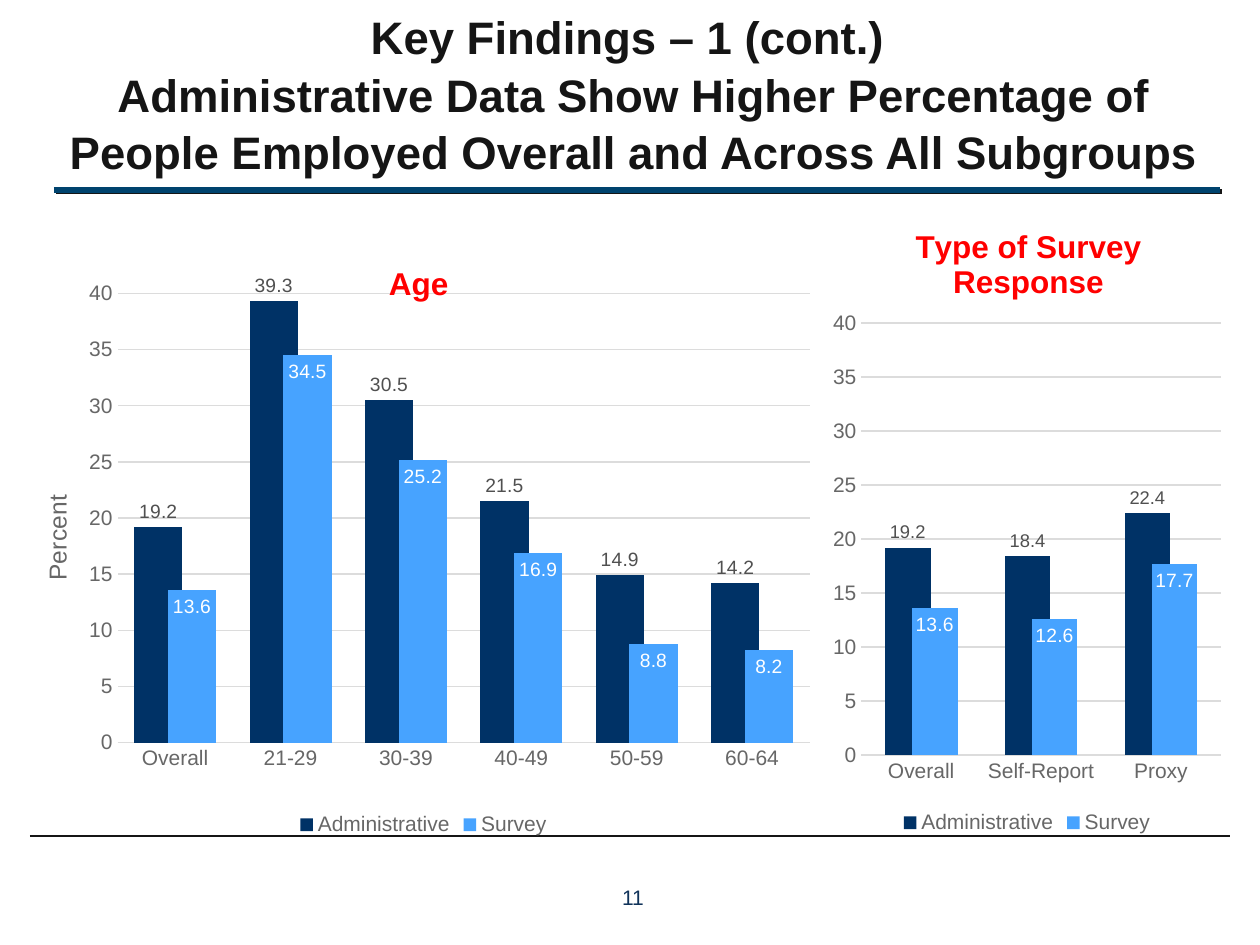
from pptx import Presentation
from pptx.chart.data import CategoryChartData
from pptx.dml.color import RGBColor
from pptx.enum.chart import XL_CHART_TYPE, XL_LABEL_POSITION, XL_LEGEND_POSITION, XL_TICK_MARK
from pptx.enum.shapes import MSO_CONNECTOR
from pptx.enum.text import MSO_ANCHOR, MSO_AUTO_SIZE, PP_ALIGN
from pptx.oxml import parse_xml
from pptx.oxml.ns import nsdecls, qn
from pptx.util import Emu, Pt

INK, NAVY, SKY = "151515", "003266", "47A3FF"
GRAY, GRID, RED, WHITE = "676767", "DCDCDC", "FF0000", "FFFFFF"


def px(count):
    return Emu(round(count * 914400 / 126))


def rgb(value):
    return RGBColor.from_string(value)


def assign(target, values):
    for name, value in values.items():
        setattr(target, name, value)


def set_layout(element, index, **values):
    existing = element.find(qn("c:layout"))
    if existing is not None:
        element.remove(existing)
    inner = '<c:layoutTarget val="inner"/>' if "w" in values else ""
    modes = "".join(f'<c:{key}Mode val="edge"/>' for key in ("x", "y"))
    sizes = "".join(f'<c:{key} val="{value}"/>' for key, value in values.items())
    element.insert(index, parse_xml(
        f'<c:layout {nsdecls("c")}><c:manualLayout>{inner}{modes}{sizes}'
        "</c:manualLayout></c:layout>"))


class SlideBuilder:
    """Holds the style and the current slide, and adds each kind of element."""

    def __init__(self, page, face="Arial"):
        self.page = page
        self.face = face

    def style(self, font, size, color, bold=False):
        assign(font, {"name": self.face, "size": Pt(size), "bold": bold})
        font.color.rgb = rgb(color)

    def place(self, shape, left, top, width, height):
        assign(shape, {"left": px(left), "top": px(top),
                       "width": px(width), "height": px(height)})

    def title(self, text, *bounds):
        box = self.page.shapes.title
        self.place(box, *bounds)
        frame = box.text_frame
        frame.text = text
        assign(frame, {"word_wrap": True, "auto_size": MSO_AUTO_SIZE.NONE,
                       "vertical_anchor": MSO_ANCHOR.BOTTOM})
        para = frame.paragraphs[0]
        assign(para, {"alignment": PP_ALIGN.CENTER, "line_spacing": 1.05})
        self.style(para.runs[0].font, 26, INK, True)
        for span in para.runs[1:]:
            self.style(span.font, 26, INK, True)

    def text(self, text, size, color, *bounds):
        box = self.page.shapes.add_textbox(*map(px, bounds))
        box.text_frame.word_wrap = True
        para = box.text_frame.paragraphs[0]
        para.text = text
        para.alignment = PP_ALIGN.CENTER
        self.style(para.runs[0].font, size, color)

    def rule(self, left, right, top, color, width, shadow=""):
        line = self.page.shapes.add_connector(
            MSO_CONNECTOR.STRAIGHT, px(left), px(top), px(right), px(top))
        line.line.color.rgb = rgb(color)
        line.line.width = Pt(width)
        effect = (f'<a:outerShdw dist="{Pt(1.4)}" dir="2700000">'
                  f'<a:srgbClr val="{shadow}"/></a:outerShdw>' if shadow else "")
        line._element.spPr.append(parse_xml(
            f'<a:effectLst {nsdecls("a")}>{effect}</a:effectLst>'))

    def heading(self, title, text, size, color, bold, x, y):
        title.text_frame.text = text
        self.style(title.text_frame.paragraphs[0].runs[0].font, size, color, bold)
        set_layout(title._element, 1, x=x, y=y)

    def axes(self, chart):
        for axis in (chart.category_axis, chart.value_axis):
            assign(axis, {"major_tick_mark": XL_TICK_MARK.NONE,
                          "minor_tick_mark": XL_TICK_MARK.NONE})
            self.style(axis.tick_labels.font, 12, GRAY)
        values = chart.value_axis
        assign(values, {"minimum_scale": 0, "maximum_scale": 40, "major_unit": 5,
                        "has_major_gridlines": True})
        values.format.line.fill.background()
        for line in (values.major_gridlines.format.line, chart.category_axis.format.line):
            line.color.rgb = rgb(GRID)
            line.width = Pt(0.75)

    def columns(self, bounds, heading, heading_at, groups, series, gap, overlap,
                plot_area, admin_size=11):
        data = CategoryChartData()
        data.categories = groups
        for name, values in series.items():
            data.add_series(name, values)
        chart = self.page.shapes.add_chart(
            XL_CHART_TYPE.COLUMN_CLUSTERED, *map(px, bounds), data).chart
        self.style(chart.font, 10, INK)
        assign(chart, {"has_title": True, "has_legend": True})
        self.heading(chart.chart_title, heading, 18, RED, True, *heading_at)
        assign(chart.legend, {"position": XL_LEGEND_POSITION.BOTTOM,
                              "include_in_layout": False})
        self.style(chart.legend.font, 12, GRAY)
        self.axes(chart)
        plot = chart.plots[0]
        assign(plot, {"gap_width": gap, "overlap": overlap, "vary_by_categories": False})
        looks = ((NAVY, "505050", admin_size, XL_LABEL_POSITION.OUTSIDE_END),
                 (SKY, WHITE, 11, XL_LABEL_POSITION.INSIDE_END))
        for bars, (fill, ink, size, position) in zip(plot.series, looks):
            bars.format.fill.solid()
            bars.format.fill.fore_color.rgb = rgb(fill)
            assign(bars.data_labels, {"show_value": True, "position": position})
            self.style(bars.data_labels.font, size, ink)
        set_layout(chart._chartSpace.chart.plotArea, 0, **dict(zip("xywh", plot_area)))
        return chart

    def value_title(self, chart, text, x, y):
        title = chart.value_axis.axis_title
        self.heading(title, text, 14, GRAY, False, x, y)
        body = title.text_frame._txBody.bodyPr
        body.set("rot", "-5400000")
        body.set("vert", "horz")


def main():
    deck = Presentation()
    assign(deck, {"slide_width": px(1260), "slide_height": px(945)})
    builder = SlideBuilder(deck.slides.add_slide(deck.slide_layouts[5]))
    builder.rule(54, 1220, 190, "00436E", 3, INK)
    builder.rule(30, 1230, 836, INK, 1.5)
    builder.text("11", 12, "10335A", 570, 878, 126, 48)
    builder.title("Key Findings – 1 (cont.) \vAdministrative Data Show Higher Percentage of "
                  "People Employed Overall and Across All Subgroups", 37, 28, 1194, 157)
    builder.columns(
        (825, 194, 404, 645), "Type of Survey Response", (0.21, 0.04),
        ("Overall", "Self-Report", "Proxy"),
        {"Administrative": (19.2, 18.4, 22.4), "Survey": (13.6, 12.6, 17.7)},
        103, 41, (0.09, 0.2, 0.89, 0.67), 10.5)
    age_chart = builder.columns(
        (21, 226, 805, 615), "Age", (0.45, 0.05),
        ("Overall", "21-29", "30-39", "40-49", "50-59", "60-64"),
        {"Administrative": (19.2, 39.3, 30.5, 21.5, 14.9, 14.2),
         "Survey": (13.6, 34.5, 25.2, 16.9, 8.8, 8.2)},
        69, 30, (0.12, 0.11, 0.86, 0.73))
    builder.value_title(age_chart, "Percent", 0.02, 0.43)
    deck.save("out.pptx")


if __name__ == "__main__":
    main()
